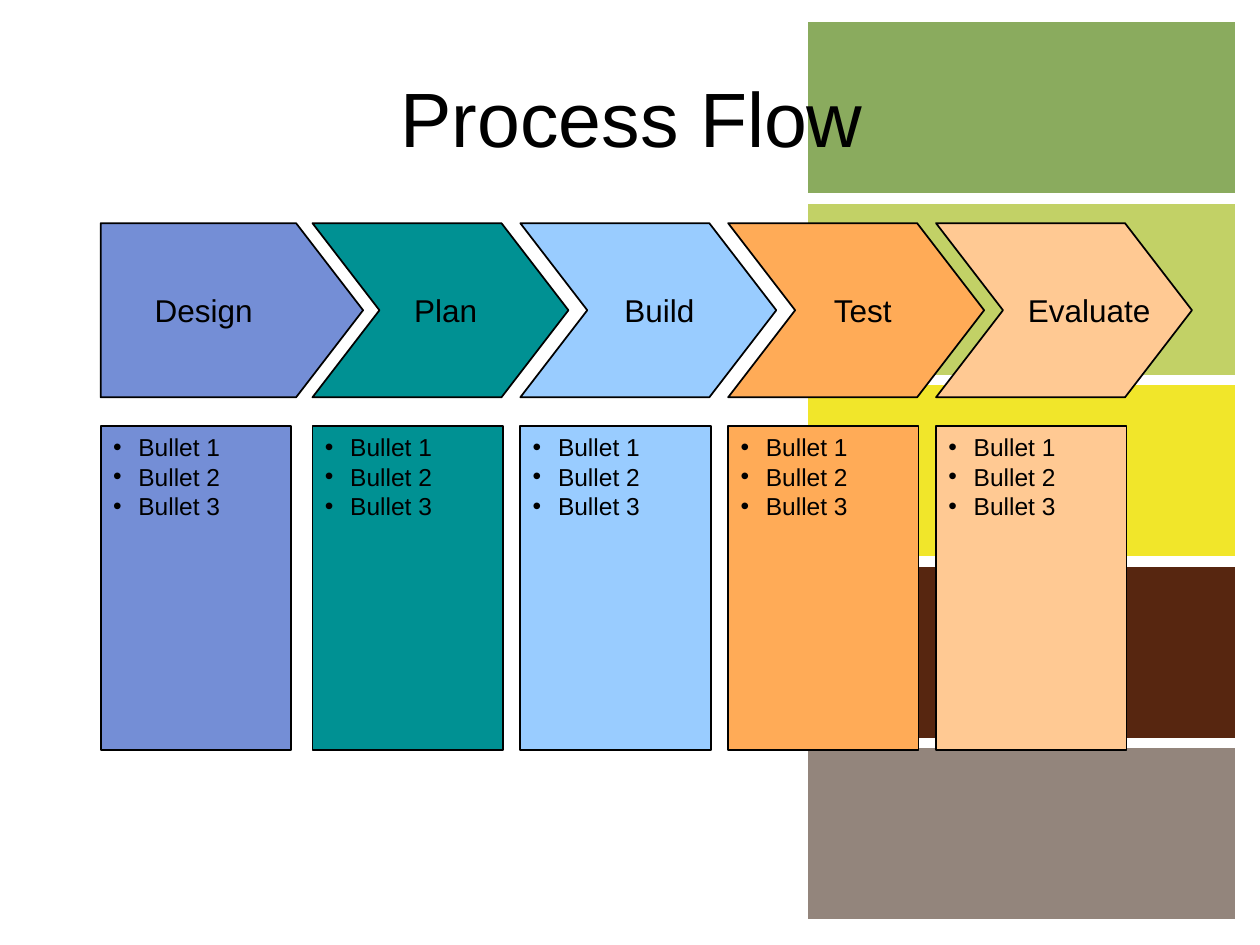
"""Build the process flow slide: five coloured steps with bullet boxes."""
import pptx
import pptx.dml.color
import pptx.enum.shapes
import pptx.enum.text
import pptx.oxml.ns
import pptx.util
from lxml import etree
from pptx.util import Cm, Pt

COLORS = {
    "black": "000000", "white": "FFFFFF",
    "green": "8AAB5E", "lime": "C2D166", "yellow": "F1E62A",
    "brown": "572610", "taupe": "93857C",
    "blue": "748ED6", "teal": "009193", "sky": "99CCFF",
    "orange": "FFAB57", "peach": "FFC993",
}
TITLE = "Process Flow"
BANDS = ["green", "lime", "yellow", "brown", "taupe"]
BULLETS = ["Bullet 1", "Bullet 2", "Bullet 3"]
STEPS = [
    {"name": "Design", "color": "blue", "label": (2.87, 2.55)},
    {"name": "Plan", "color": "teal", "label": (8.1, 1.84)},
    {"name": "Build", "color": "sky", "label": (12.34, 1.99)},
    {"name": "Test", "color": "orange", "label": (16.56, 1.81)},
    {"name": "Evaluate", "color": "peach", "label": (20.47, 3.07)},
]
FIRST_LEFT, SECOND_LEFT, STEP_PITCH = 2.03, 6.3, 4.19
BAND = {"left": 16.19, "top": 0.34, "width": 8.81, "height": 3.66}
BOX = {"top": 8.59, "width": 3.84, "height": 6.53}
ARROW = {"top": 4.5, "height": 3.51, "body": 3.81, "first_body": 3.94, "point": 1.35}
LABEL = {"top": 5.74, "height": 1.02}
INDENT = Cm(0.51)
ANCHOR = pptx.enum.text.MSO_ANCHOR
ALIGN = pptx.enum.text.PP_ALIGN


def rgb(name):
    return pptx.dml.color.RGBColor.from_string(COLORS[name])


def paint(shape, fill, line, width):
    shape.shadow.inherit = False
    shape.fill.solid()
    shape.fill.fore_color.rgb = rgb(fill)
    shape.line.color.rgb = rgb(line)
    shape.line.width = Pt(width)


def add_rect(s, left, top, width, height):
    rect = pptx.enum.shapes.MSO_SHAPE.RECTANGLE
    return s.shapes.add_shape(rect, Cm(left), Cm(top), Cm(width), Cm(height))


def write(tf, lines, size, align, **frame):
    for key, value in frame.items():
        setattr(tf, key, value)
    for i, line in enumerate(lines):
        p = tf.add_paragraph() if i else tf.paragraphs[0]
        p.alignment = align
        r = p.add_run()
        r.text = line
        for key, value in {"size": Pt(size), "name": "Arial"}.items():
            setattr(r.font, key, value)
        r.font.color.rgb = rgb("black")


def add_bullets(tf):
    qn = pptx.oxml.ns.qn
    for p in tf.paragraphs:
        props = p._p.get_or_add_pPr()
        props.set("marL", str(INDENT))
        props.set("indent", str(-INDENT))
        etree.SubElement(props, qn("a:buFont")).set("typeface", "Arial")
        etree.SubElement(props, qn("a:buChar")).set("char", "•")


def add_arrow(s, left, first):
    top, height, point = ARROW["top"], ARROW["height"], ARROW["point"]
    right = left + ARROW["first_body" if first else "body"]
    middle, bottom = top + height / 2, top + height
    points = [(left, top), (right, top), (right + point, middle),
              (right, bottom), (left, bottom)]
    if not first:
        points.append((left + point, middle))
    points = [(Cm(x), Cm(y)) for x, y in points]
    builder = s.shapes.build_freeform(*points[0])
    builder.add_line_segments(points[1:], close=True)
    return builder.convert_to_shape()


def main():
    prs = pptx.Presentation()
    prs.slide_width, prs.slide_height = Cm(25.4), Cm(19.05)
    s = prs.slides.add_slide(prs.slide_layouts[5])

    for i, color in enumerate(BANDS):
        top = BAND["top"] + i * BAND["height"]
        band = add_rect(s, BAND["left"], top, BAND["width"], BAND["height"])
        paint(band, color, "white", 6)

    title = s.shapes.title
    place = {"left": 1.35, "top": 0.76, "width": 22.78, "height": 3.18}
    for key, value in place.items():
        setattr(title, key, Cm(value))
    write(title.text_frame, [TITLE], 44, ALIGN.CENTER, vertical_anchor=ANCHOR.MIDDLE)
    title.element.getparent().append(title.element)

    lefts = [FIRST_LEFT] + [SECOND_LEFT + i * STEP_PITCH for i in range(len(STEPS) - 1)]
    for left, step in zip(lefts, STEPS):
        box = add_rect(s, left, BOX["top"], BOX["width"], BOX["height"])
        paint(box, step["color"], "black", 1)
        write(box.text_frame, BULLETS, 14, ALIGN.LEFT,
              vertical_anchor=ANCHOR.TOP, word_wrap=True)
        add_bullets(box.text_frame)

    for i, (left, step) in enumerate(zip(lefts, STEPS)):
        paint(add_arrow(s, left, i == 0), step["color"], "black", 1)

    for step in STEPS:
        left, width = step["label"]
        label = s.shapes.add_textbox(Cm(left), Cm(LABEL["top"]), Cm(width), Cm(LABEL["height"]))
        write(label.text_frame, [step["name"]], 18, ALIGN.LEFT, word_wrap=False,
              auto_size=pptx.enum.text.MSO_AUTO_SIZE.SHAPE_TO_FIT_TEXT)

    prs.save("out.pptx")


if __name__ == "__main__":
    main()
